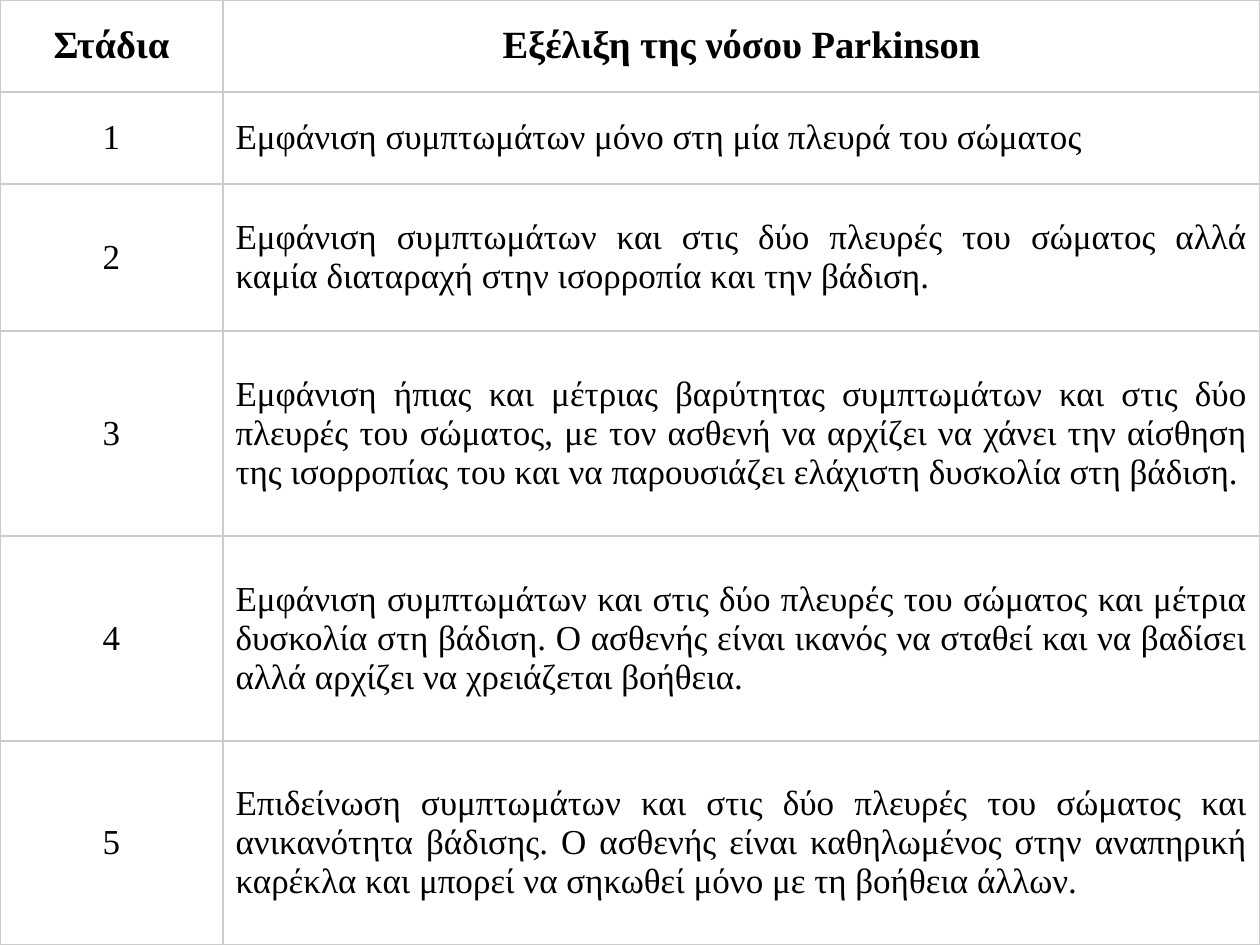
from lxml import etree
from pptx import Presentation
from pptx.dml.color import RGBColor
from pptx.enum.text import MSO_ANCHOR, PP_ALIGN
from pptx.oxml.ns import qn
from pptx.util import Emu, Pt

PX = 914400 // 126
BLACK = RGBColor(0x00, 0x00, 0x00)
GREY = RGBColor(0xCC, 0xCC, 0xCC)

HEADINGS = ("Στάδια", "Εξέλιξη της νόσου Parkinson")
STAGES = (
    "Εμφάνιση συμπτωμάτων μόνο στη μία πλευρά του σώματος",
    "Εμφάνιση συμπτωμάτων και στις δύο πλευρές του σώματος αλλά καμία "
    "διαταραχή στην ισορροπία και την βάδιση.",
    "Εμφάνιση ήπιας και μέτριας βαρύτητας συμπτωμάτων και στις δύο πλευρές "
    "του σώματος, με τον ασθενή να αρχίζει να χάνει την αίσθηση της "
    "ισορροπίας του και να παρουσιάζει ελάχιστη δυσκολία στη βάδιση.",
    "Εμφάνιση συμπτωμάτων και στις δύο πλευρές του σώματος και μέτρια "
    "δυσκολία στη βάδιση. Ο ασθενής είναι ικανός να σταθεί και να βαδίσει "
    "αλλά αρχίζει να χρειάζεται βοήθεια.",
    "Επιδείνωση συμπτωμάτων και στις δύο πλευρές του σώματος και ανικανότητα "
    "βάδισης. Ο ασθενής είναι καθηλωμένος στην αναπηρική καρέκλα και μπορεί "
    "να σηκωθεί μόνο με τη βοήθεια άλλων.",
)
COLUMN_WIDTHS = (223, 1037)
ROW_HEIGHTS = (92, 92, 147, 205, 205, 204)


def px(length):
    return Emu(length * PX)


class SlideBuilder:
    base = {"name": "Times New Roman", "color": BLACK}
    heading = {**base, "size": Pt(22), "bold": True}
    body = {**base, "size": Pt(20), "bold": False}

    def __init__(self, page):
        self.page = page

    def add_table(self, rows, widths, heights):
        frame = self.page.shapes.add_table(
            len(rows), len(widths), 0, 0, px(sum(widths)), px(sum(heights)))
        table = frame.table
        table.first_row = table.horz_banding = False
        for column, width in zip(table.columns, widths):
            column.width = px(width)
        for row, height in zip(table.rows, heights):
            row.height = px(height)
        for r, texts in enumerate(rows):
            style = self.body if r else self.heading
            for c, text in enumerate(texts):
                align = PP_ALIGN.JUSTIFY if r and c else PP_ALIGN.CENTER
                self.fill_cell(table.cell(r, c), text, style, align)

    def fill_cell(self, cell, text, style, align):
        cell.vertical_anchor = MSO_ANCHOR.MIDDLE
        para = cell.text_frame.paragraphs[0]
        para.alignment = align
        span = para.add_run()
        span.text = text
        for key, value in style.items():
            if key == "color":
                span.font.color.rgb = value
            else:
                setattr(span.font, key, value)
        self.add_borders(cell, GREY, Pt(1))
        cell.fill.background()

    def add_borders(self, cell, color, width):
        properties = cell._tc.get_or_add_tcPr()
        for side in ("lnL", "lnR", "lnT", "lnB"):
            line = etree.SubElement(properties, qn(f"a:{side}"), w=str(width))
            fill = etree.SubElement(line, qn("a:solidFill"))
            etree.SubElement(fill, qn("a:srgbClr"), val=str(color))


def main():
    deck = Presentation()
    deck.slide_width, deck.slide_height = px(1260), px(945)
    page = deck.slides.add_slide(deck.slide_layouts[6])
    numbered = [(str(n), text) for n, text in enumerate(STAGES, 1)]
    SlideBuilder(page).add_table(
        [HEADINGS, *numbered], COLUMN_WIDTHS, ROW_HEIGHTS)
    deck.save("out.pptx")


if __name__ == "__main__":
    main()
